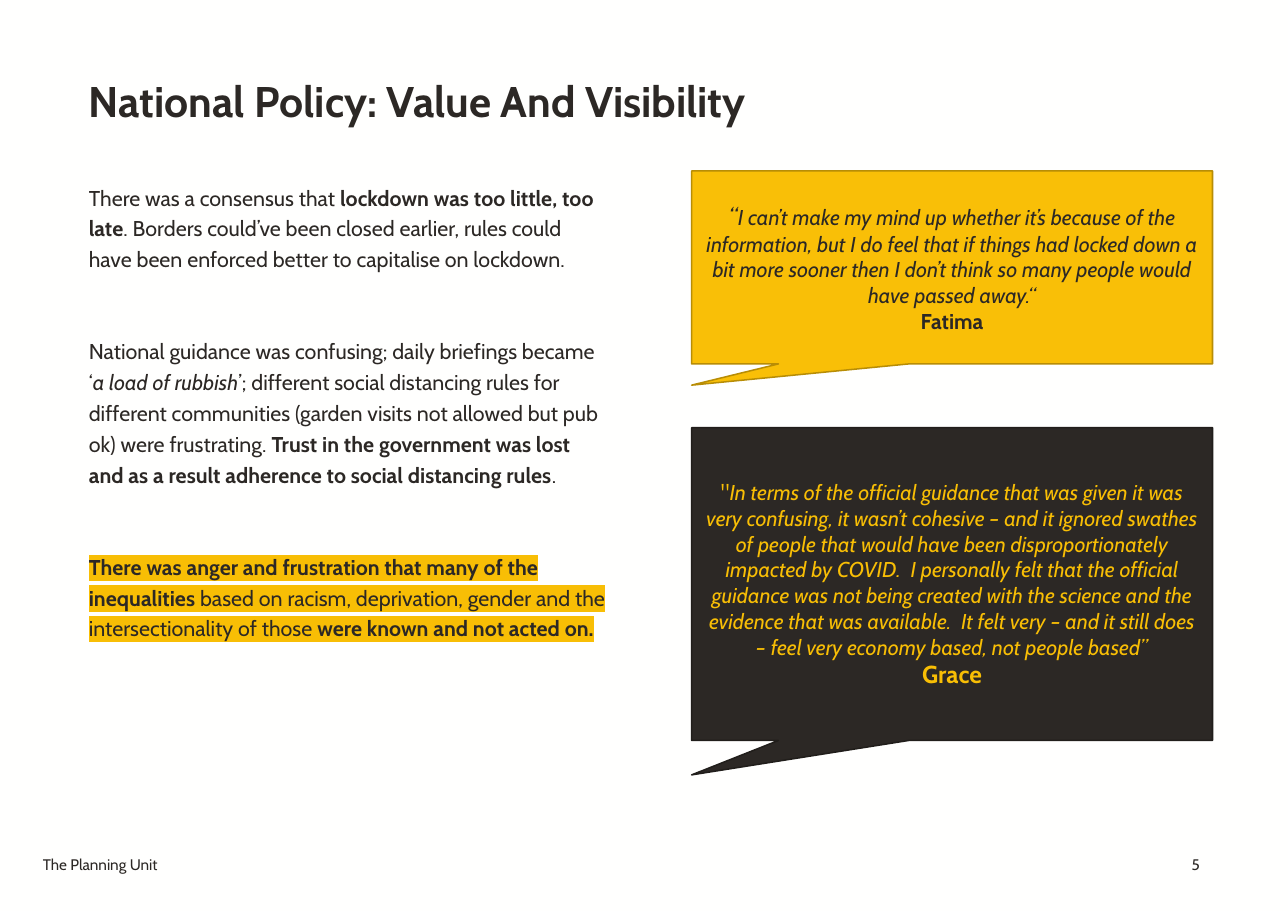
from lxml import etree
from pptx import Presentation
from pptx.dml.color import RGBColor
from pptx.enum.shapes import MSO_SHAPE
from pptx.enum.text import MSO_ANCHOR, PP_ALIGN
from pptx.oxml.ns import qn
from pptx.util import Cm, Pt

CALLOUT = MSO_SHAPE.RECTANGULAR_CALLOUT
MIDDLE, BOTTOM, TOP = MSO_ANCHOR.MIDDLE, MSO_ANCHOR.BOTTOM, MSO_ANCHOR.TOP
LEFT, CENTER, RIGHT = PP_ALIGN.LEFT, PP_ALIGN.CENTER, PP_ALIGN.RIGHT

FONT = "Cabin"
COLORS = {
    "paper": "FFFFFE",
    "ink": "2C2825",
    "ink edge": "211E1B",
    "gold": "F9BF07",
    "gold edge": "B88D05",
    "mark": "F8BE05",
}


def color(name):
    return RGBColor.from_string(COLORS[name])


def write(frame, paras, size, ink="ink", align=LEFT, gap=0, lead=1.0):
    """Fill a frame; a run is (text, style, size), style letters: b, i, h(ighlight)."""
    frame.word_wrap = True
    for n, runs in enumerate(paras):
        para = frame.add_paragraph() if n else frame.paragraphs[0]
        para.alignment, para.line_spacing, para.space_after = align, lead, Pt(gap)
        para.font.name, para.font.size = FONT, Pt(size)
        para.font.color.rgb = color(ink)
        for text, style, *own in runs:
            run = para.add_run()
            run.text = text
            run.font.bold, run.font.italic = "b" in style, "i" in style
            if own:
                run.font.size = Pt(own[0])
            if "h" in style:
                mark = etree.SubElement(run.font._element, qn("a:highlight"))
                etree.SubElement(mark, qn("a:srgbClr"), val=COLORS["mark"])


prs = Presentation()
prs.slide_width, prs.slide_height = Cm(29.7), Cm(21)
slide = prs.slides.add_slide(prs.slide_layouts[6])
slide.background.fill.solid()
slide.background.fill.fore_color.rgb = color("paper")

# Title, body and footer
title = [[("National Policy: Value And Visibility", "b")]]
body = [
    [
        ("There was a consensus that ", ""),
        ("lockdown was too little, too late", "b"),
        (". Borders could’ve been closed earlier, rules could have been "
         "enforced better to capitalise on lockdown.", ""),
    ],
    [
        ("National guidance was confusing; daily briefings became ‘", ""),
        ("a load of rubbish", "i"),
        ("’; different social distancing rules for different communities "
         "(garden visits not allowed but pub ok) were frustrating. ", ""),
        ("Trust in the government was lost and as a result adherence to "
         "social distancing rules", "b"),
        (".", ""),
    ],
    [
        ("There was anger and frustration that many of the inequalities ", "bh"),
        ("based on racism, deprivation, gender and the intersectionality "
         "of those ", "h"),
        ("were known and not acted on.", "bh"),
    ],
]
texts = [
    (1.85, 1.09, 26.01, 2.01, BOTTOM, title, 28, LEFT, 0, 1.0),
    (1.85, 3.94, 12.4, 15.39, TOP, body, 14, LEFT, 40, 1.2),
    (0.79, 19.51, 3.25, 1.02, TOP, [[("The Planning Unit", "")]], 10, LEFT, 0, 1.0),
    (25.86, 19.51, 2.01, 1.02, TOP, [[("5", "")]], 10, RIGHT, 0, 1.0),
]
for x, y, w, h, anchor, paras, size, align, gap, lead in texts:
    frame = slide.shapes.add_textbox(Cm(x), Cm(y), Cm(w), Cm(h)).text_frame
    frame.margin_left = frame.margin_right = Cm(0.2)
    frame.margin_top = frame.margin_bottom = Cm(0.2)
    frame.vertical_anchor = anchor
    write(frame, paras, size, align=align, gap=gap, lead=lead)

# Quotes
fatima = [
    [
        ("“", "i", 16),
        ("I can’t make my mind up whether it’s because of the information, "
         "but I do feel that if things had locked down a bit more sooner then "
         "I don’t think so many people would have passed away.“", "i"),
    ],
    [("Fatima", "b")],
]
grace = [
    [
        ("\"", ""),
        ("In terms of the official guidance that was given it was very "
         "confusing, it wasn’t cohesive – and it ignored swathes of people "
         "that would have been disproportionately impacted by COVID.  I "
         "personally felt that the official guidance was not being created "
         "with the science and the evidence that was available.  It felt very "
         "– and it still does – feel very economy based, not people based”", "i"),
    ],
    [("Grace", "b", 16)],
]
quotes = [
    (3.94, 4.45, "gold", "gold edge", "ink", fatima),
    (9.86, 7.21, "ink", "ink edge", "mark", grace),
]
for y, h, fill, edge, ink, paras in quotes:
    quote = slide.shapes.add_shape(CALLOUT, Cm(15.95), Cm(y), Cm(12.01), Cm(h))
    quote.shadow.inherit = False
    quote.adjustments[0], quote.adjustments[1] = -0.5, 0.61
    quote.fill.solid()
    quote.fill.fore_color.rgb = color(fill)
    quote.line.color.rgb = color(edge)
    quote.line.width = Pt(1)
    quote.text_frame.vertical_anchor = MIDDLE
    write(quote.text_frame, paras, 14, ink, CENTER)

prs.save("out.pptx")
